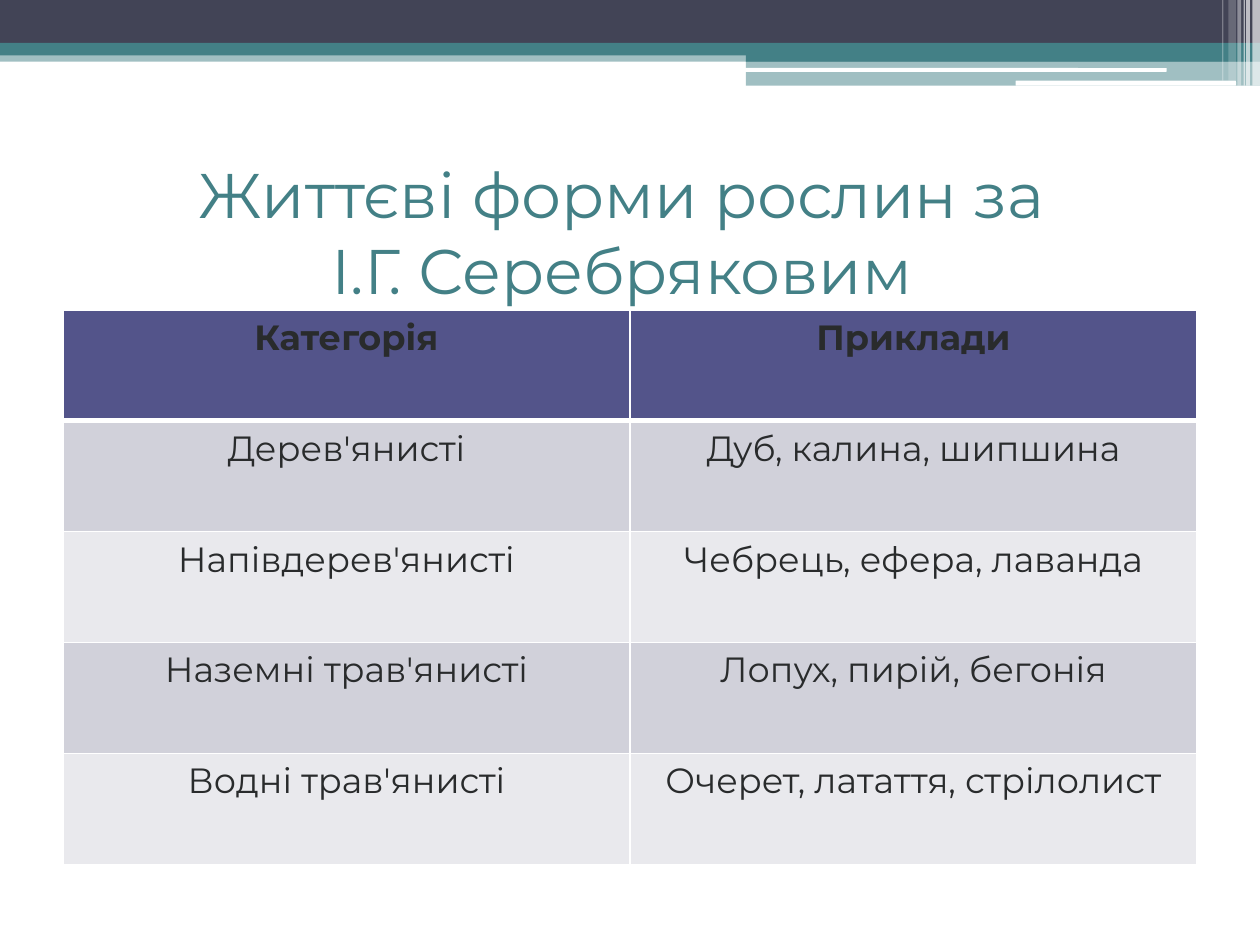
from lxml import etree
from pptx import Presentation
from pptx.dml.color import RGBColor
from pptx.enum import shapes, text
from pptx.oxml.ns import qn
from pptx.util import Inches, Pt

FONT = "Montserrat"
TEAL = RGBColor(0x43, 0x80, 0x86)
SLATE = RGBColor(0x42, 0x44, 0x56)
WHITE = RGBColor(0xFF, 0xFF, 0xFF)
INK = RGBColor(0x29, 0x2B, 0x2C)
HEADER = RGBColor(0x53, 0x54, 0x8A)
BANDS = [RGBColor(0xE9, 0xE9, 0xED), RGBColor(0xD1, 0xD1, 0xDA)]

TITLE = ["Життєві форми рослин за ", "І.Г. Серебряковим "]
ROWS = [
    ("Категорія", "Приклади"),
    ("Дерев'янисті", "Дуб, калина, шипшина"),
    ("Напівдерев'янисті", "Чебрець, ефера, лаванда"),
    ("Наземні трав'янисті", "Лопух, пирій, бегонія"),
    ("Водні трав'янисті", "Очерет, латаття, стрілолист"),
]

WIDTH, HEIGHT = 10, 7.5
MARGIN = WIDTH / 20
TABLE_TOP, ROW_HEIGHT = 2.46, 0.88
SPLIT = 5.92  # where the deeper right-hand bands begin

# Header bands: left, top, width, height, colour, opacity in percent
BARS = [
    (0, 0.4, WIDTH, 0.09, TEAL, 50),
    (0, 0, WIDTH, 0.34, SLATE, 100),
    (0, 0.34, WIDTH, 0.1, TEAL, 100),
    (SPLIT, 0.39, WIDTH - SPLIT, 0.1, TEAL, 100),
    (SPLIT, 0.48, WIDTH - SPLIT, 0.2, TEAL, 50),
]
ROUNDED_LINES = [(5.91, 0.54, 3.35, 0.03), (8.06, 0.64, 1.75, 0.04)]
# Vertical stripes at the right edge: left, width, height, opacity
STRIPES = [
    (9.94, 0.06, 0.68, 65),
    (9.89, 0.03, 0.68, 65),
    (9.87, 0.01, 0.68, 60),
    (9.82, 0.03, 0.68, 40),
    (9.75, 0.06, 0.64, 20),
    (9.7, 0.01, 0.64, 30),
]


def add_bar(page, left, top, width, height, color, opacity=100,
            kind=shapes.MSO_SHAPE.RECTANGLE):
    bar = page.shapes.add_shape(kind, *map(Inches, (left, top, width, height)))
    bar.shadow.inherit = False
    bar.line.fill.background()
    bar.fill.solid()
    bar.fill.fore_color.rgb = color
    if opacity < 100:
        tint = bar.fill._xPr.find(qn("a:solidFill"))[0]
        etree.SubElement(tint, qn("a:alpha"), val=str(opacity * 1000))
    return bar


def add_span(para, words, size, color, bold=False):
    span = para.add_run()
    span.text = words
    span.font.name = FONT
    span.font.size = Pt(size)
    span.font.bold = bold
    span.font.color.rgb = color


def set_borders(cell, widths):
    properties = cell._tc.get_or_add_tcPr()
    for index, (side, width) in enumerate(widths.items()):
        line = etree.Element(qn(f"a:ln{side}"), w=str(Pt(width)))
        fill = etree.SubElement(line, qn("a:solidFill"))
        etree.SubElement(fill, qn("a:srgbClr"), val=str(WHITE))
        properties.insert(index, line)


def add_header(page):
    for bar in BARS:
        add_bar(page, *bar)
    for place in ROUNDED_LINES:
        add_bar(page, *place, WHITE, kind=shapes.MSO_SHAPE.ROUNDED_RECTANGLE)
    for left, width, height, opacity in STRIPES:
        add_bar(page, left, 0, width, height, WHITE, opacity)


def add_title(page):
    box = page.shapes.add_textbox(*map(Inches, (MARGIN, 1.25, WIDTH - 2 * MARGIN, 1.17)))
    frame = box.text_frame
    frame.word_wrap = True
    frame.vertical_anchor = text.MSO_ANCHOR.MIDDLE
    para = frame.paragraphs[0]
    para.alignment = text.PP_ALIGN.CENTER
    for index, words in enumerate(TITLE):
        if index:
            para.add_line_break()
        add_span(para, words, 36, TEAL)


def add_forms_table(page):
    place = (MARGIN, TABLE_TOP, WIDTH - 2 * MARGIN, ROW_HEIGHT * len(ROWS))
    table = page.shapes.add_table(len(ROWS), len(ROWS[0]), *map(Inches, place)).table
    for row, entries in enumerate(ROWS):
        for column, words in enumerate(entries):
            cell = table.cell(row, column)
            cell.margin_left = cell.margin_right = 0
            cell.margin_top = cell.margin_bottom = 0
            cell.fill.solid()
            cell.fill.fore_color.rgb = BANDS[row % 2] if row else HEADER
            # A thick rule parts the heading from the body
            set_borders(cell, {"L": 1, "R": 1, "T": 3 if row == 1 else 1,
                               "B": 3 if row == 0 else 1})
            para = cell.text_frame.paragraphs[0]
            para.alignment = text.PP_ALIGN.CENTER
            para.line_spacing = 1.15
            para.space_after = Pt(10)
            add_span(para, words, 20, INK, bold=row == 0)


def main():
    deck = Presentation()
    deck.slide_width, deck.slide_height = Inches(WIDTH), Inches(HEIGHT)
    page = deck.slides.add_slide(deck.slide_layouts[6])
    add_header(page)
    add_title(page)
    add_forms_table(page)
    deck.save("out.pptx")


if __name__ == "__main__":
    main()
